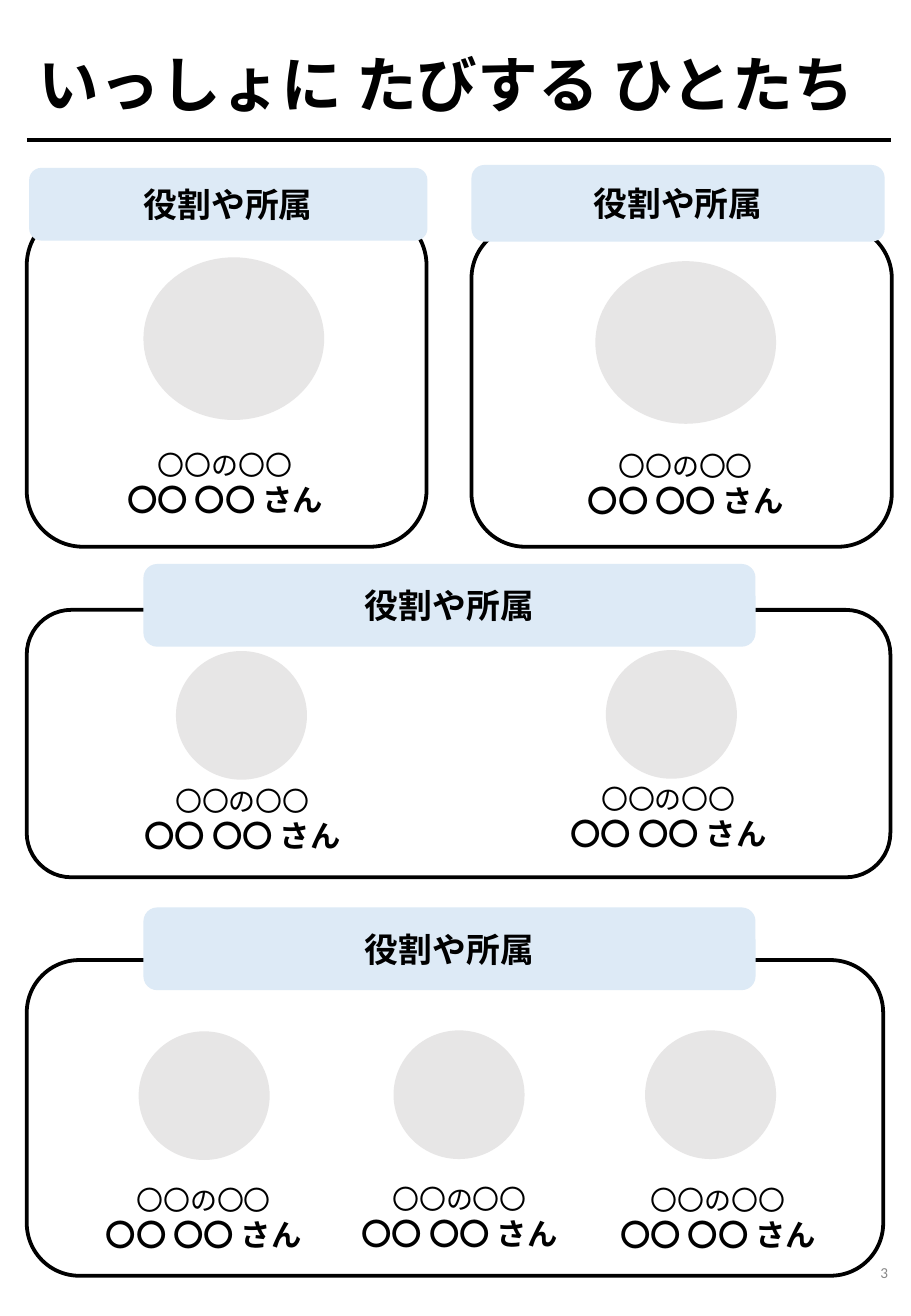
from dataclasses import dataclass
from typing import NamedTuple

from lxml import etree
from pptx import Presentation
from pptx.dml.color import RGBColor
from pptx.enum import lang, shapes, text
from pptx.oxml import ns
from pptx.util import Cm, Pt


@dataclass(frozen=True)
class Theme:
    font: str = "Calibri"
    ink: str = "000000"
    paper: str = "FFFFFF"
    label: str = "DDEAF6"
    photo: str = "E7E6E6"
    page: str = "888888"
    title_size: float = 36
    label_size: float = 20
    origin_size: float = 16
    name_size: float = 18
    page_size: float = 9
    line_width: float = 2.25


class Box(NamedTuple):
    """Left, top, width and height in centimetres."""
    left: float
    top: float
    width: float
    height: float

    def lengths(self) -> list:
        return [Cm(side) for side in self]


class Person(NamedTuple):
    photo: Box
    caption: Box


@dataclass(frozen=True)
class Group:
    frame: Box
    label: Box
    people: list[Person]


THEME = Theme()
ROLE = "役割や所属"
ORIGIN = "〇〇の〇〇"
NAME = "〇〇 〇〇 さん"


def person(photo_at: tuple, caption_at: tuple, photo_size: tuple = (2.74, 2.69)) -> Person:
    return Person(Box(*photo_at, *photo_size), Box(*caption_at, 6.58, 1.7))


LARGE = (3.78, 3.4)
GROUPS = [
    Group(Box(0.56, 4.37, 8.36, 7.06), Box(0.61, 3.51, 8.33, 1.52),
          [person((3, 5.38), (1.42, 9.25), LARGE)]),
    Group(Box(9.86, 4.7, 8.79, 6.73), Box(9.86, 3.45, 8.64, 1.6),
          [person((12.45, 5.46), (11.05, 9.27), LARGE)]),
    Group(Box(0.56, 12.75, 18.06, 5.59), Box(3, 11.79, 12.8, 1.73),
          [person((3.68, 13.61), (1.78, 16.28)),
           person((12.67, 13.59), (10.69, 16.23))]),
    Group(Box(0.56, 20.07, 17.91, 6.6), Box(3, 18.97, 12.8, 1.73),
          [person((2.9, 21.56), (0.97, 24.61)),
           person((8.23, 21.54), (6.32, 24.59)),
           person((13.49, 21.54), (11.73, 24.61))]),
]


def style_paragraph(paragraph, size: float, bold: bool = False, color: str = THEME.ink,
                    align=text.PP_ALIGN.CENTER) -> None:
    paragraph.alignment = align
    for run in paragraph.runs:
        run.font.name = THEME.font
        run.font.size = Pt(size)
        run.font.bold = bold
        run.font.color.rgb = RGBColor.from_string(color)
        run.font.language_id = lang.MSO_LANGUAGE_ID.JAPANESE


def prepare_frame(frame, anchor=text.MSO_ANCHOR.TOP) -> None:
    frame.word_wrap = True
    frame.auto_size = text.MSO_AUTO_SIZE.NONE
    frame.vertical_anchor = anchor
    frame.margin_left = frame.margin_right = Cm(0.25)
    frame.margin_top = frame.margin_bottom = Cm(0.13)


def add_filled(slide, kind, box: Box, fill: str, outlined: bool = False):
    shape = slide.shapes.add_shape(kind, *box.lengths())
    shape.shadow.inherit = False
    shape.fill.solid()
    shape.fill.fore_color.rgb = RGBColor.from_string(fill)
    if outlined:
        shape.line.color.rgb = RGBColor.from_string(THEME.ink)
        shape.line.width = Pt(THEME.line_width)
    else:
        shape.line.fill.background()
    return shape


def add_title(slide) -> None:
    title = slide.shapes.title
    title.left, title.top, title.width, title.height = Box(0.56, 0.84, 17.91, 1.8).lengths()
    prepare_frame(title.text_frame)
    title.text_frame.text = "いっしょに たびする ひとたち"
    style_paragraph(title.text_frame.paragraphs[0], THEME.title_size, bold=True,
                    align=text.PP_ALIGN.LEFT)


def add_title_rule(slide) -> None:
    rule = slide.shapes.add_connector(shapes.MSO_CONNECTOR.STRAIGHT,
                                      Cm(0.56), Cm(2.92), Cm(18.64), Cm(2.92))
    rule.line.color.rgb = RGBColor.from_string(THEME.ink)
    rule.line.width = Pt(THEME.line_width)
    etree.SubElement(rule._element.spPr, ns.qn("a:effectLst"))


def add_person(slide, member: Person) -> None:
    add_filled(slide, shapes.MSO_SHAPE.OVAL, member.photo, THEME.photo)
    caption = slide.shapes.add_textbox(*member.caption.lengths()).text_frame
    prepare_frame(caption)
    caption.text = f"{ORIGIN}\n{NAME}"
    origin, name = caption.paragraphs
    style_paragraph(origin, THEME.origin_size)
    style_paragraph(name, THEME.name_size, bold=True)


def add_group(slide, group: Group) -> None:
    rounded = shapes.MSO_SHAPE.ROUNDED_RECTANGLE
    add_filled(slide, rounded, group.frame, THEME.paper, outlined=True)
    label = add_filled(slide, rounded, group.label, THEME.label).text_frame
    prepare_frame(label, text.MSO_ANCHOR.MIDDLE)
    label.text = ROLE
    style_paragraph(label.paragraphs[0], THEME.label_size, bold=True)
    for member in group.people:
        add_person(slide, member)


def add_page_number(slide) -> None:
    page = slide.shapes.add_textbox(*Box(14.53, 25.86, 4.29, 1.47).lengths()).text_frame
    prepare_frame(page, text.MSO_ANCHOR.MIDDLE)
    page.text = "3"
    style_paragraph(page.paragraphs[0], THEME.page_size, color=THEME.page,
                    align=text.PP_ALIGN.RIGHT)


def main() -> None:
    deck = Presentation()
    deck.slide_width, deck.slide_height = Cm(19.05), Cm(27.51)
    slide = deck.slides.add_slide(deck.slide_layouts.get_by_name("Title Only"))
    add_title(slide)
    add_title_rule(slide)
    for group in GROUPS:
        add_group(slide, group)
    add_page_number(slide)
    deck.save("out.pptx")


if __name__ == "__main__":
    main()
